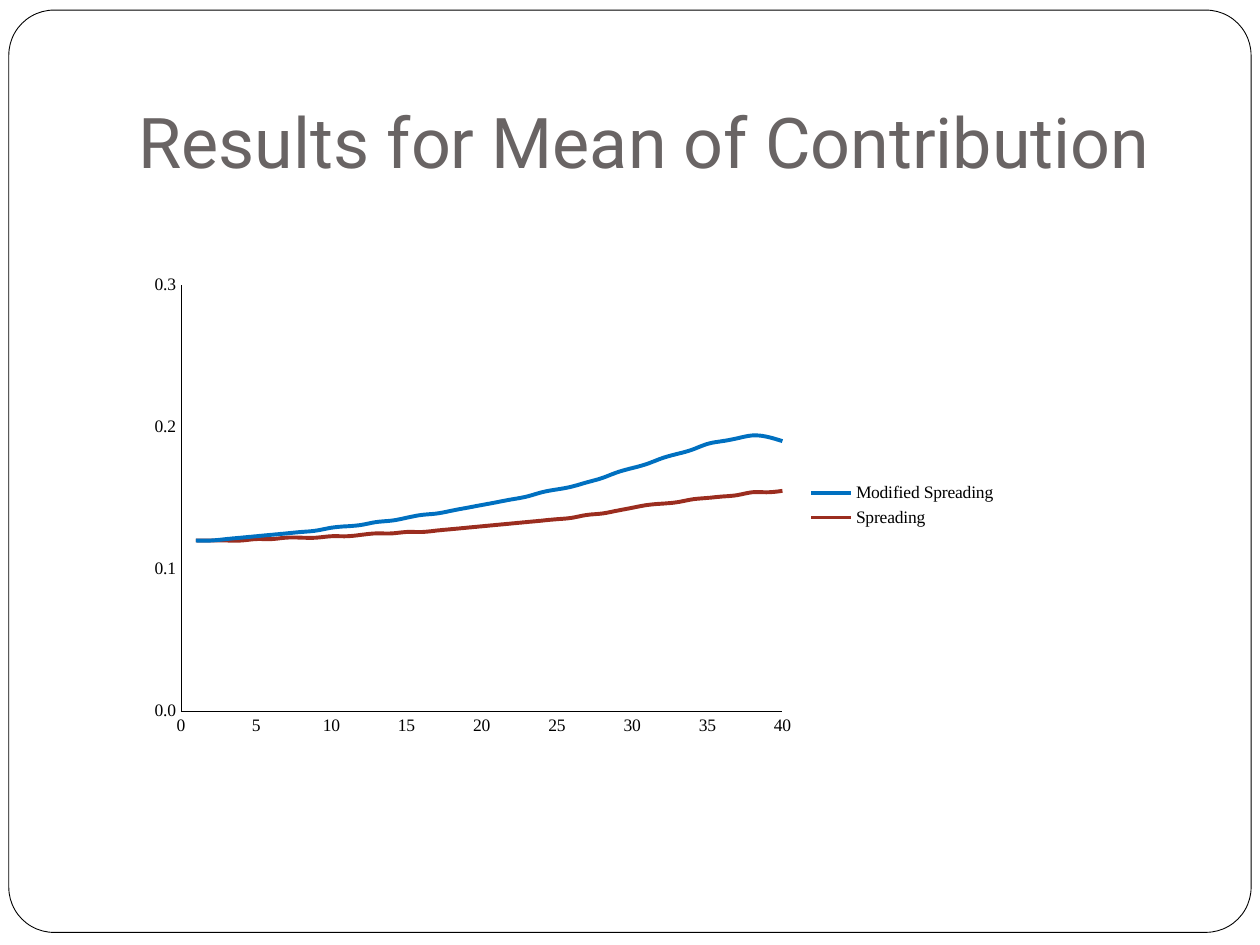
import pptx
import pptx.chart.data
import pptx.dml.color
import pptx.enum.chart
import pptx.enum.shapes
import pptx.enum.text
import pptx.oxml
import pptx.oxml.ns
import pptx.util
from pptx.util import Inches

MODIFIED = [
    0.12, 0.12, 0.121, 0.122, 0.123, 0.124, 0.125, 0.126, 0.127, 0.129,
    0.13, 0.131, 0.133, 0.134, 0.136, 0.138, 0.139, 0.141, 0.143, 0.145,
    0.147, 0.149, 0.151, 0.154, 0.156, 0.158, 0.161, 0.164, 0.168, 0.171,
    0.174, 0.178, 0.181, 0.184, 0.188, 0.19, 0.192, 0.194, 0.193, 0.19,
]
SPREADING = [
    0.12, 0.12, 0.12, 0.12, 0.121, 0.121, 0.122, 0.122, 0.122, 0.123,
    0.123, 0.124, 0.125, 0.125, 0.126, 0.126, 0.127, 0.128, 0.129, 0.13,
    0.131, 0.132, 0.133, 0.134, 0.135, 0.136, 0.138, 0.139, 0.141, 0.143,
    0.145, 0.146, 0.147, 0.149, 0.15, 0.151, 0.152, 0.154, 0.154, 0.155,
]
SERIES = [
    ("Modified Spreading", MODIFIED, "0070C0"),
    ("Spreading", SPREADING, "9B2D1F"),
]


def color(value):
    return pptx.dml.color.RGBColor.from_string(value)


def set_font(font, name, size, fill):
    font.name = name
    font.size = pptx.util.Pt(size)
    font.color.rgb = color(fill)


def write_text(frame, text, name, size, fill, align):
    para = frame.paragraphs[0]
    para.alignment = align
    span = para.add_run()
    span.text = text
    set_font(span.font, name, size, fill)


def add_frame(page, box):
    """Draw the rounded page border behind everything else."""
    frame = page.shapes.add_shape(
        pptx.enum.shapes.MSO_SHAPE.ROUNDED_RECTANGLE, *map(Inches, box))
    frame.adjustments[0] = 0.049
    frame.shadow.inherit = False
    frame.fill.solid()
    frame.fill.fore_color.rgb = color("FFFFFF")
    frame.line.color.rgb = color("000000")
    frame.line.width = pptx.util.Pt(0.5)
    page.shapes.title.element.addprevious(frame.element)


def add_title(page, box, text):
    title = page.shapes.title
    title.left, title.top, title.width, title.height = map(Inches, box)
    frame = title.text_frame
    frame.word_wrap = True
    frame.auto_size = pptx.enum.text.MSO_AUTO_SIZE.NONE
    frame.vertical_anchor = pptx.enum.text.MSO_ANCHOR.BOTTOM
    frame.margin_left = frame.margin_right = frame.margin_bottom = Inches(0.1)
    frame.margin_top = Inches(0.05)
    write_text(frame, text, name="Roboto", size=40, fill="696464",
               align=pptx.enum.text.PP_ALIGN.LEFT)


def format_axis(axis, maximum, step, number_format):
    axis.minimum_scale, axis.maximum_scale = 0, maximum
    axis.major_unit = step
    axis.has_major_gridlines = False
    axis.major_tick_mark = pptx.enum.chart.XL_TICK_MARK.NONE
    axis.minor_tick_mark = pptx.enum.chart.XL_TICK_MARK.NONE
    axis.tick_labels.number_format = number_format
    axis.tick_labels.number_format_is_linked = False
    axis.format.line.color.rgb = color("000000")
    axis.format.line.width = pptx.util.Pt(0.5)


def place_plot(chart, **fractions):
    """Fix the inner plot area, in fractions of the chart's size."""
    values = "".join(f'<c:{key} val="{value}"/>' for key, value in fractions.items())
    layout = pptx.oxml.parse_xml(
        f'<c:layout {pptx.oxml.ns.nsdecls("c")}><c:manualLayout>'
        '<c:layoutTarget val="inner"/><c:xMode val="edge"/><c:yMode val="edge"/>'
        f'{values}</c:manualLayout></c:layout>')
    area = chart.element.chart.plotArea
    for old in area.findall(pptx.oxml.ns.qn("c:layout")):
        area.remove(old)
    area.insert(0, layout)


def add_contribution_chart(page, box):
    data = pptx.chart.data.XyChartData()
    for name, values, _ in SERIES:
        series = data.add_series(name)
        for x, y in enumerate(values, start=1):
            series.add_data_point(x, y)
    chart = page.shapes.add_chart(
        pptx.enum.chart.XL_CHART_TYPE.XY_SCATTER_SMOOTH_NO_MARKERS,
        *map(Inches, box), data).chart
    set_font(chart.font, "Times New Roman", 10, "000000")
    chart.has_title = False
    chart.has_legend = True
    chart.legend.position = pptx.enum.chart.XL_LEGEND_POSITION.RIGHT
    chart.legend.include_in_layout = False
    format_axis(chart.category_axis, 40, 5, "General")
    format_axis(chart.value_axis, 0.3, 0.1, "0.0")
    place_plot(chart, x=0.05, y=0.04, w=0.69, h=0.89)
    plot = chart.plots[0]
    plot.vary_by_categories = False
    for series, (_, _, stroke) in zip(plot.series, SERIES):
        series.format.line.color.rgb = color(stroke)
        series.format.line.width = pptx.util.Pt(2.25)
        series.marker.style = pptx.enum.chart.XL_MARKER_STYLE.NONE
        for smooth in series._element.findall(pptx.oxml.ns.qn("c:smooth")):
            smooth.set("val", "1")


def main():
    deck = pptx.Presentation()
    deck.slide_width, deck.slide_height = Inches(10), Inches(7.5)
    page = deck.slides.add_slide(deck.slide_layouts.get_by_name("Title Only"))
    add_frame(page, (0.07, 0.08, 9.86, 7.32))
    add_title(page, (1, 0.3, 8.5, 1.25), "Results for Mean of Contribution")
    add_contribution_chart(page, (1.09, 2.11, 6.92, 3.8))
    deck.save("out.pptx")


if __name__ == "__main__":
    main()
